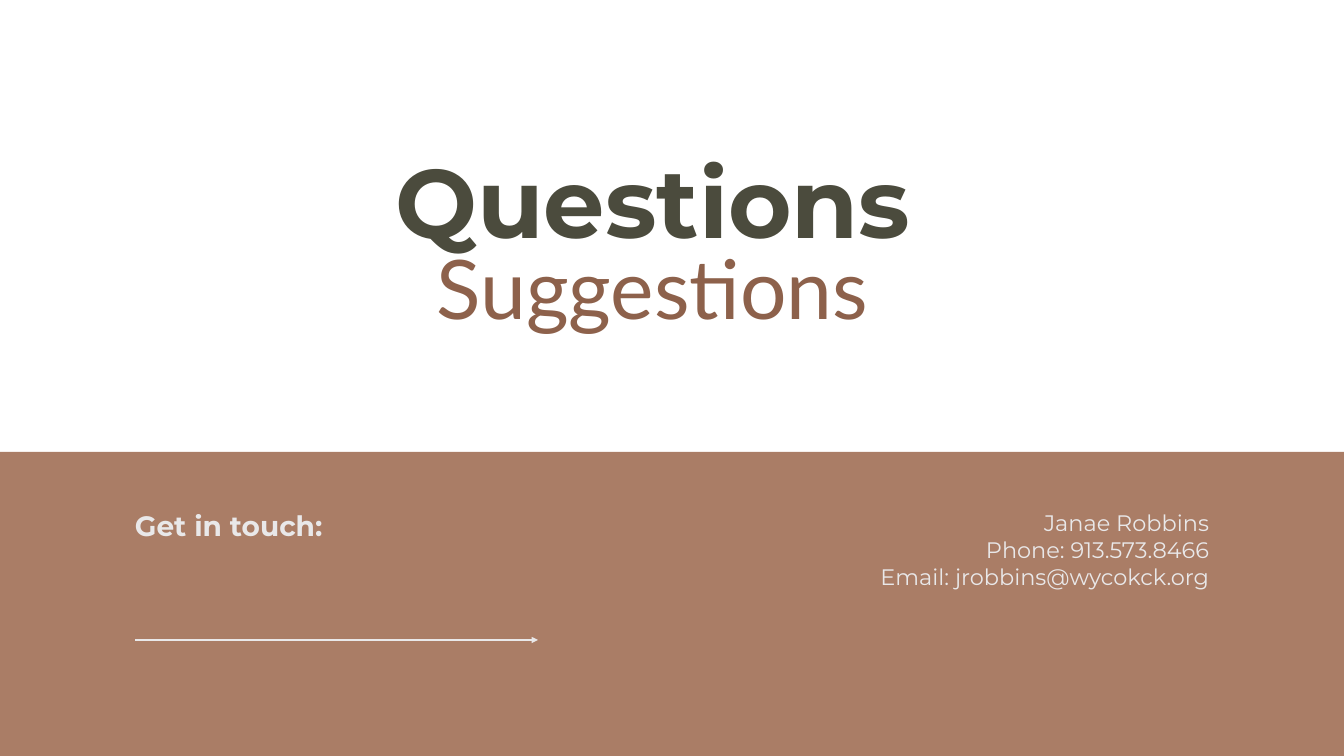
import pptx
import pptx.util
import pptx.dml.color
import pptx.enum.shapes
import pptx.enum.text
import pptx.oxml
import pptx.oxml.ns

PX = 914400 / 67.2
WIDTH, HEIGHT = 1344, 756
PANEL_TOP = 452
BROWN, LIGHT = "AA7D66", "E9E8E9"
ALIGN = pptx.enum.text.PP_ALIGN

TEXTS = [
    dict(box=(407, 246, 491, 93), lines=["Suggestions"], font="Lato", size=88,
         color="8D614B", bold=False, align=ALIGN.CENTER, spacing=96.8),
    dict(box=(278, 151, 750, 109), lines=["Questions"], font="Montserrat", size=104,
         color="4B4B3D", bold=True, align=ALIGN.CENTER, spacing=114.4),
    dict(box=(135, 509, 235, 33), lines=["Get in touch:"], font="Montserrat", size=30,
         color=LIGHT, bold=True, align=ALIGN.LEFT, spacing=36),
    dict(box=(528, 509, 681, 108),
         lines=["Janae Robbins", "Phone: 913.573.8466", "Email: jrobbins@wycokck.org"],
         font="Montserrat", size=24, color=LIGHT, bold=False, align=ALIGN.RIGHT, spacing=28.8),
]
ARROW = (135, 640, 538, 640)


def emu(*lengths):
    return [pptx.util.Emu(round(length * PX)) for length in lengths]


def rgb(value):
    return pptx.dml.color.RGBColor.from_string(value)


def add_panel(slide):
    panel = slide.shapes.add_shape(
        pptx.enum.shapes.MSO_SHAPE.RECTANGLE, *emu(0, PANEL_TOP, WIDTH, HEIGHT - PANEL_TOP))
    panel.shadow.inherit = False
    panel.fill.solid()
    panel.fill.fore_color.rgb = rgb(BROWN)
    panel.line.fill.background()


def add_text(slide, box, lines, font, size, color, bold, align, spacing):
    text_frame = slide.shapes.add_textbox(*emu(*box)).text_frame
    text_frame.word_wrap = True
    text_frame.margin_left = text_frame.margin_right = 0
    text_frame.margin_top = text_frame.margin_bottom = 0
    text_frame.text = "\n".join(lines)
    for paragraph in text_frame.paragraphs:
        paragraph.alignment = align
        paragraph.line_spacing = pptx.util.Pt(spacing)
        for run in paragraph.runs:
            run.font.name = font
            run.font.size = pptx.util.Pt(size)
            run.font.bold = bold
            run.font.color.rgb = rgb(color)


def add_arrow(slide):
    arrow = slide.shapes.add_connector(
        pptx.enum.shapes.MSO_CONNECTOR.STRAIGHT, *emu(*ARROW))
    arrow.line.color.rgb = rgb(LIGHT)
    arrow.line.width = pptx.util.Pt(2.25)
    namespace = pptx.oxml.ns.nsdecls("a")
    arrow.line._get_or_add_ln().append(
        pptx.oxml.parse_xml(f'<a:tailEnd {namespace} type="triangle"/>'))
    arrow._element.spPr.append(pptx.oxml.parse_xml(f"<a:effectLst {namespace}/>"))


def main():
    presentation = pptx.Presentation()
    presentation.slide_width, presentation.slide_height = emu(WIDTH, HEIGHT)
    slide = presentation.slides.add_slide(presentation.slide_layouts[6])
    add_panel(slide)
    for text in TEXTS:
        add_text(slide, **text)
    add_arrow(slide)
    presentation.save("out.pptx")


if __name__ == "__main__":
    main()
